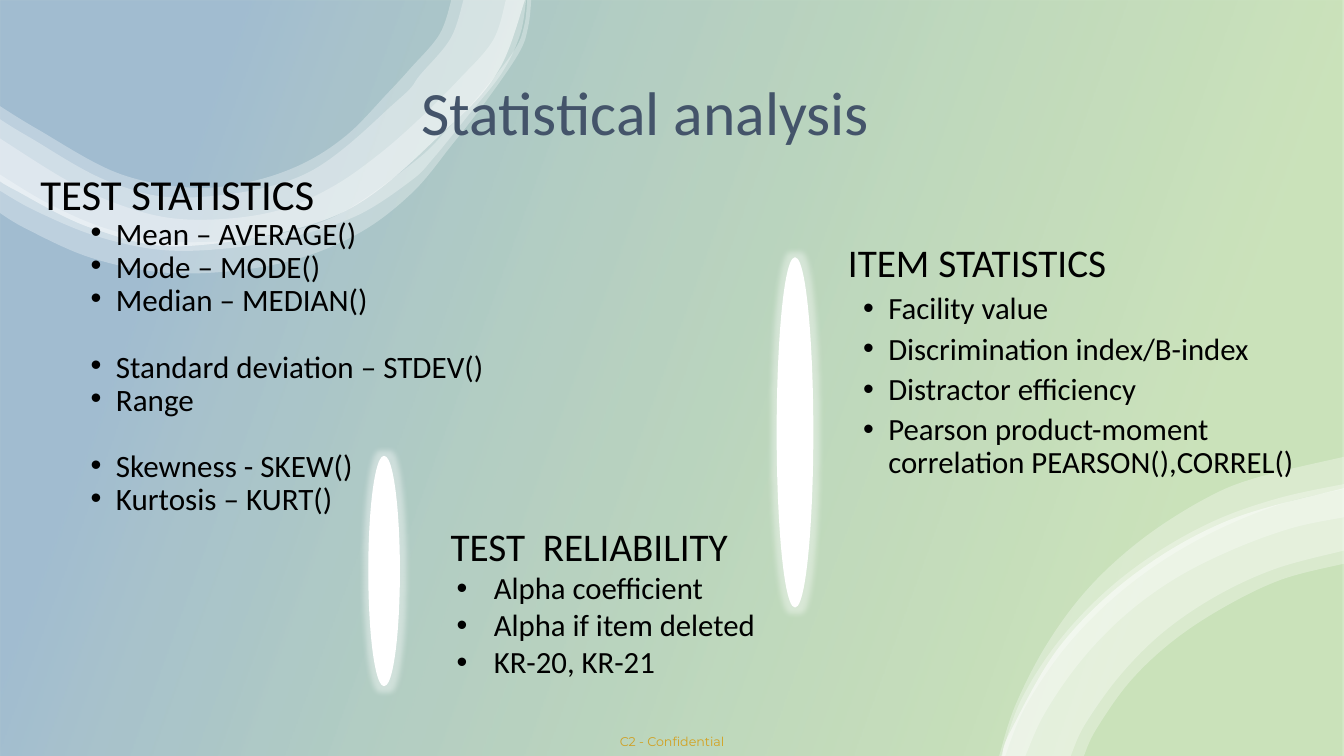
from pptx import Presentation
from pptx.dml.color import RGBColor
from pptx.enum.shapes import MSO_SHAPE
from pptx.enum.text import MSO_ANCHOR, MSO_AUTO_SIZE, PP_ALIGN
from pptx.oxml.ns import qn
from pptx.oxml.xmlchemy import OxmlElement
from pptx.util import Inches, Pt

RECTANGLE, OVAL = MSO_SHAPE.RECTANGLE, MSO_SHAPE.OVAL
MIDDLE, CENTER = MSO_ANCHOR.MIDDLE, PP_ALIGN.CENTER
NO_AUTOFIT = MSO_AUTO_SIZE.NONE

WIDTH, HEIGHT = 13.33, 7.5
TWO_CONTENT_LAYOUT = 3
PALE_GREEN = RGBColor(0xE2, 0xF0, 0xD9)
GREEN = RGBColor(0x70, 0xAD, 0x47)
BLUE = RGBColor(0x44, 0x72, 0xC4)
SLATE = RGBColor(0x44, 0x54, 0x6A)
ORANGE = RGBColor(0xFF, 0xA5, 0x00)
WHITE = RGBColor(0xFF, 0xFF, 0xFF)
BLACK = RGBColor(0, 0, 0)
BODY_FONT, FOOTER_FONT = "Calibri", "Montserrat"

# Each ribbon is a pair of edges, given by points in inches.
TOP_EDGE = [(5.21, -0.01), (4.95, 0.69), (4.45, 1.26), (3.37, 2.12),
            (1.87, 2.44), (0.93, 2.27), (0.14, 1.88), (-0.02, 1.78)]
TOP_RIBBONS = [
    ([(5.27, -0.01), (5.24, 0.26), (5.15, 0.52), (4.83, 0.99), (4.48, 1.44),
      (4.1, 1.9), (3.6, 2.29), (2.98, 2.56), (2.29, 2.69), (1.58, 2.7),
      (0.88, 2.55), (0.26, 2.27), (-0.02, 2.1)],
     [(5.23, -0.01), (5.2, 0.25), (5.1, 0.5), (4.75, 0.95), (4.45, 1.27),
      (4.14, 1.58), (3.43, 2.09), (2.86, 2.3), (2.25, 2.39), (1.62, 2.39),
      (1.03, 2.26), (0.48, 2.02), (-0.02, 1.72)]),
    ([(5.22, -0.01), (5.16, 0.34), (4.98, 0.72), (4.64, 1.15), (4.29, 1.58),
      (4.08, 1.79), (3.56, 2.13), (2.94, 2.34), (2.29, 2.46), (1.61, 2.48),
      (0.95, 2.34), (0.35, 2.09), (-0.02, 1.88)],
     [(5.02, -0.01), (4.89, 0.4), (4.55, 0.79), (4.16, 1.18), (3.76, 1.53),
      (3.32, 1.84), (2.82, 2.07), (2.25, 2.17), (1.67, 2.16), (1.13, 2.01),
      (0.63, 1.77), (-0.02, 1.36)]),
    (TOP_EDGE,
     [(4.6, -0.01), (4.47, 0.38), (4.17, 0.74), (3.95, 0.99), (3.02, 1.73),
      (1.87, 1.96), (1.08, 1.8), (0.29, 1.36), (-0.02, 1.17)]),
    (TOP_EDGE,
     [(4.48, -0.01), (4.36, 0.34), (4.07, 0.68), (3.84, 0.93), (3.44, 1.34),
      (2.99, 1.63), (2.45, 1.81), (1.87, 1.86), (1.15, 1.71), (0.37, 1.28),
      (-0.02, 1.04)]),
]
CORNER_EDGE = [(9.94, 7.5), (10.02, 7.26), (10.52, 6.4), (11.26, 5.69),
               (12.19, 5.16), (13.34, 4.84)]
CORNER_RIBBONS = [
    ([(9.91, 7.5), (10.07, 7), (10.39, 6.38), (10.81, 5.82), (11.34, 5.34),
      (11.95, 4.95), (12.46, 4.74), (13.34, 4.53)],
     [(9.97, 7.5), (10.16, 7.03), (10.53, 6.47), (10.99, 5.98), (11.52, 5.57),
      (12.11, 5.24), (12.74, 4.99), (13.34, 4.85)]),
    (CORNER_EDGE,
     [(10.75, 7.5), (10.87, 7.24), (11.2, 6.77), (11.62, 6.37), (12.13, 6.03),
      (12.71, 5.75), (13.34, 5.59)]),
    ([(9.93, 7.5), (10.12, 6.96), (10.47, 6.4), (10.93, 5.9), (11.46, 5.49),
      (12.06, 5.16), (12.69, 4.94), (13.34, 4.8)],
     [(10.17, 7.5), (10.36, 7.08), (10.71, 6.57), (11.14, 6.12), (11.64, 5.75),
      (12.21, 5.46), (12.81, 5.24), (13.34, 5.13)]),
    (CORNER_EDGE,
     [(10.62, 7.5), (10.76, 7.19), (11.11, 6.7), (11.54, 6.27), (12.07, 5.91),
      (12.66, 5.64), (13.34, 5.46)]),
]

TEST_STATISTICS = ["Mean – AVERAGE()", "Mode – MODE()", "Median – MEDIAN()",
                   "Standard deviation – STDEV()", "Range",
                   "Skewness - SKEW()", "Kurtosis – KURT()"]
ITEM_STATISTICS = ["Facility value", "Discrimination index/B-index",
                   "Distractor efficiency",
                   "Pearson product-moment correlation PEARSON(),CORREL()"]
TEST_RELIABILITY = ["Alpha coefficient", "Alpha if item deleted", "KR-20, KR-21"]


def add_child(parent, tag, **attributes):
    child = OxmlElement(tag)
    for name, value in attributes.items():
        child.set(name, str(value))
    parent.append(child)
    return child


def set_opacity(shape, *percents):
    """Give the shape's colours, in order, their opacity."""
    colors = shape._element.spPr.iter(qn("a:srgbClr"))
    for color, percent in zip(colors, percents):
        add_child(color, "a:alpha", val=percent * 1000)


def place(shape, left, top, width, height):
    shape.left, shape.top = Inches(left), Inches(top)
    shape.width, shape.height = Inches(width), Inches(height)


def curve_edge(lines, knots):
    """Turn the straight segments between the knots into Bézier curves."""
    padded = [knots[0], *knots, knots[-1]]
    windows = zip(padded, padded[1:], padded[2:], padded[3:])
    for line, (before, start, end, after) in zip(lines, windows):
        curve = OxmlElement("a:cubicBezTo")
        controls = ([s + (e - b) / 6 for b, s, e in zip(before, start, end)],
                    [e - (a - s) / 6 for s, e, a in zip(start, end, after)])
        for x, y in (*controls, end):
            add_child(curve, "a:pt", x=round(x), y=round(y))
        line.getparent().replace(line, curve)


def add_backdrop(slide):
    slide.background.fill.solid()
    slide.background.fill.fore_color.rgb = PALE_GREEN
    panel = slide.shapes.add_shape(RECTANGLE, 0, 0, Inches(WIDTH), Inches(HEIGHT))
    panel.shadow.inherit = False
    panel.line.fill.background()
    panel.fill.gradient()
    panel.fill.gradient_angle = 160
    stops = zip(panel.fill.gradient_stops, (0.16, 0.85), (GREEN, BLUE))
    for stop, position, color in stops:
        stop.position = position
        stop.color.rgb = color
    set_opacity(panel, 20, 40)


def add_ribbons(slide, ribbons):
    group = slide.shapes.add_group_shape()
    for outer, inner in ribbons:
        points = [(Inches(x), Inches(y)) for x, y in outer + inner[::-1]]
        builder = group.shapes.build_freeform(*points[0])
        builder.add_line_segments(points[1:], close=True)
        ribbon = builder.convert_to_shape()
        properties = ribbon._element.spPr
        lines = list(properties.iter(qn("a:lnTo")))
        knots = [(int(point.get("x")), int(point.get("y")))
                 for point in properties.iter(qn("a:pt"))]
        turn = len(outer)
        curve_edge(lines[:turn - 1], knots[:turn])
        curve_edge(lines[turn:], knots[turn:])
        ribbon.shadow.inherit = False
        ribbon.fill.solid()
        ribbon.fill.fore_color.rgb = WHITE
        ribbon.line.fill.background()
        set_opacity(ribbon, 30)


def add_glowing_divider(slide, left, top, width, height):
    divider = slide.shapes.add_shape(OVAL, 0, 0, 0, 0)
    place(divider, left, top, width, height)
    divider.fill.solid()
    divider.fill.fore_color.rgb = WHITE
    divider.line.color.rgb = WHITE
    divider.line.width = Pt(1)
    divider.shadow.inherit = False
    effects = divider._element.spPr.find(qn("a:effectLst"))
    glow = add_child(effects, "a:glow", rad=Pt(8))
    color = add_child(glow, "a:srgbClr", val=WHITE)
    add_child(color, "a:alpha", val=40000)


def format_text(para, size, color, font=BODY_FONT):
    for span in para.runs:
        span.font.size, span.font.name = Pt(size), font
        span.font.color.rgb = color


def set_indent(para, margin, first_line):
    properties = para._p.get_or_add_pPr()
    properties.set("marL", str(Inches(margin)))
    properties.set("indent", str(Inches(first_line)))
    return properties


def fill_list(box, heading, items, sizes, spacing, gaps, heading_indent=0,
              bullet_indent=(0.75, -0.25), group_starts=()):
    """Write a heading and bullets; items in group_starts get a wider gap."""
    frame = box.text_frame
    frame.word_wrap = True
    frame.auto_size = NO_AUTOFIT
    frame.text = "\n".join([heading, *items])
    for index, para in enumerate(frame.paragraphs):
        is_item = index > 0
        para.line_spacing = spacing
        para.space_before = Pt(29 if para.text in group_starts else gaps[is_item])
        format_text(para, sizes[is_item], BLACK)
        if is_item:
            para.level = 1
            properties = set_indent(para, *bullet_indent)
            add_child(properties, "a:buFont", typeface="Arial")
            add_child(properties, "a:buChar", char="•")
        else:
            add_child(set_indent(para, heading_indent, 0), "a:buNone")


def add_footer(slide):
    box = slide.shapes.add_textbox(Inches(5.95), Inches(7.21), Inches(1.43), Inches(0.29))
    frame = box.text_frame
    frame.margin_left = frame.margin_right = frame.margin_top = frame.margin_bottom = 0
    frame.vertical_anchor = MIDDLE
    frame.word_wrap = True
    frame.text = "C2 - Confidential"
    frame.paragraphs[0].alignment = CENTER
    format_text(frame.paragraphs[0], 9, ORANGE, FOOTER_FONT)


def fill_title(title):
    place(title, 2.4, 0.14, 8.14, 2.01)
    frame = title.text_frame
    frame.text = "Statistical analysis "
    frame.vertical_anchor = MIDDLE
    para = frame.paragraphs[0]
    para.alignment, para.line_spacing = CENTER, 0.9
    format_text(para, 44, SLATE)


def main():
    deck = Presentation()
    deck.slide_width, deck.slide_height = Inches(WIDTH), Inches(HEIGHT)
    slide = deck.slides.add_slide(deck.slide_layouts[TWO_CONTENT_LAYOUT])
    title, test_box, item_box = slide.placeholders

    add_footer(slide)
    add_backdrop(slide)
    add_ribbons(slide, TOP_RIBBONS)
    add_ribbons(slide, CORNER_RIBBONS)
    for placeholder in (title, item_box, test_box):
        slide.shapes._spTree.append(placeholder._element)

    fill_title(title)
    place(item_box, 7.96, 2.37, 5.26, 4.32)
    fill_list(item_box, "ITEM STATISTICS", ITEM_STATISTICS, (28, 22), 0.9,
              (10, 5), heading_indent=0.35)
    place(test_box, 0.3, 1.75, 5.03, 3.69)
    fill_list(test_box, "TEST STATISTICS", TEST_STATISTICS, (30.5, 22.2), 0.7,
              (10, 5), group_starts=(TEST_STATISTICS[3], TEST_STATISTICS[5]))
    reliability_box = slide.shapes.add_textbox(0, 0, 0, 0)
    place(reliability_box, 3.93, 5.13, 5.87, 2.09)
    fill_list(reliability_box, "TEST  RELIABILITY", TEST_RELIABILITY, (28, 22), 1.0,
              (0, 0), heading_indent=0.44, bullet_indent=(0.87, -0.37))
    add_glowing_divider(slide, 7.71, 2.56, 0.35, 3.46)
    add_glowing_divider(slide, 3.66, 4.53, 0.3, 2.27)
    deck.save("out.pptx")


if __name__ == "__main__":
    main()
